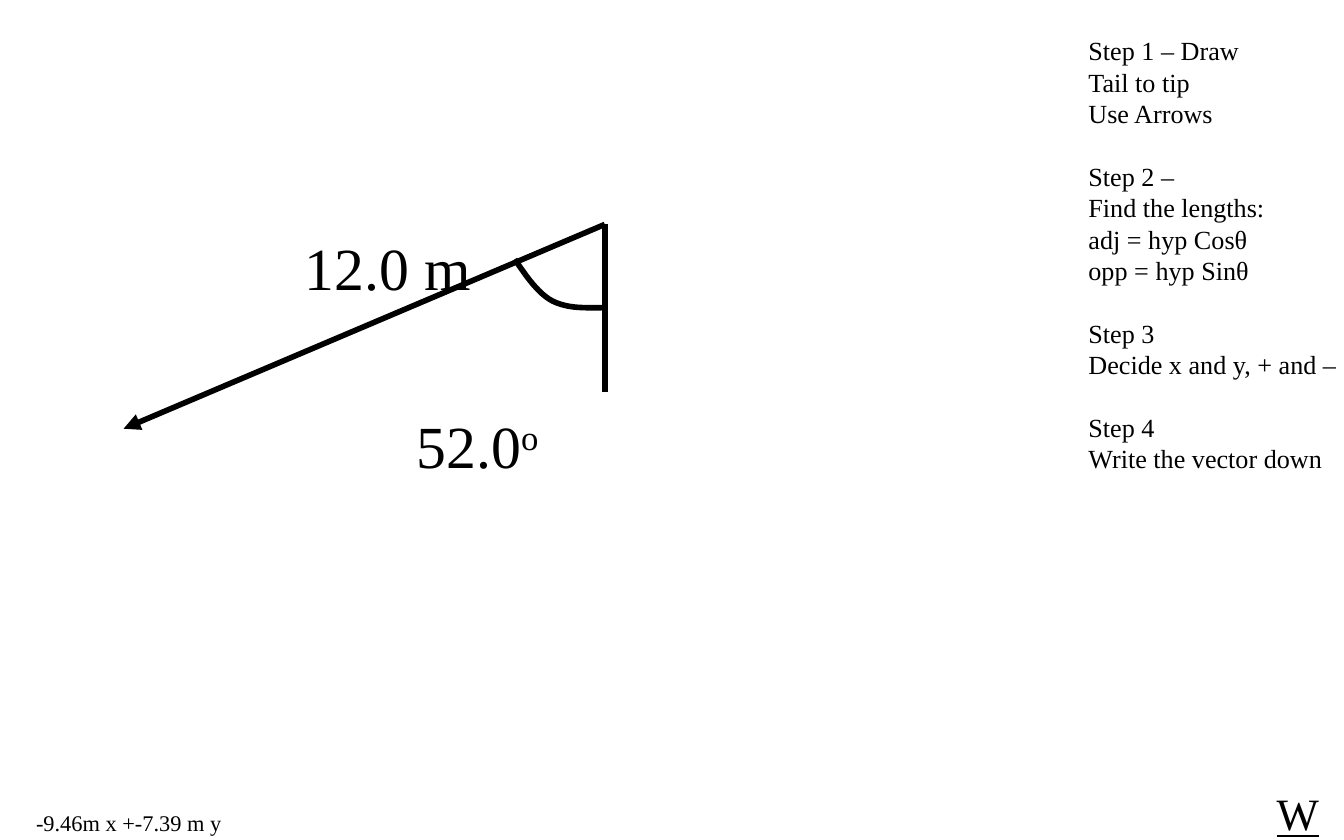
"""Build a vector-components slide: an angled vector, its labels and the solution steps."""
from lxml import etree
from pptx import Presentation
from pptx.dml.color import RGBColor
from pptx.enum import shapes, text
from pptx.oxml import ns
from pptx.util import Inches, Pt

COLORS = {"ink": "000000", "paper": "FFFFFF"}
FONT = "Times New Roman"
INK = RGBColor.from_string(COLORS["ink"])


def add_text(box, lines, size):
    tb = s.shapes.add_textbox(*[Inches(v) for v in box])
    tf = tb.text_frame
    tf.word_wrap = False
    tf.auto_size = text.MSO_AUTO_SIZE.SHAPE_TO_FIT_TEXT
    tf.text = "\n".join(lines)
    for p in tf.paragraphs:
        for r in p.runs:
            r.font.name, r.font.size = FONT, Pt(size)
            r.font.color.rgb = INK
    return tf


def add_line(start, end):
    c = s.shapes.add_connector(
        shapes.MSO_CONNECTOR.STRAIGHT, *[Inches(v) for v in (*start, *end)])
    c.line.color.rgb, c.line.width = INK, Pt(3)
    etree.SubElement(c._element.spPr, ns.qn("a:effectLst"))
    return c


prs = Presentation()
prs.slide_width, prs.slide_height = Inches(10), Inches(6.25)
s = prs.slides.add_slide(prs.slide_layouts[6])
s.background.fill.solid()
s.background.fill.fore_color.rgb = RGBColor.from_string(COLORS["paper"])

add_text((0.17, 5.97, 1.6, 0.3), ["-9.46m x +-7.39 m y"], 12)
tf = add_text((9.4, 5.8, 0.52, 0.5), ["W"], 24)
tf.paragraphs[0].runs[0].font.underline = True
add_text((2.17, 1.67, 1.45, 0.64), ["12.0 m"], 32)

tf = add_text((3, 2.99, 1.14, 0.64), ["52.0"], 32)
r = tf.paragraphs[0].add_run()
r.text = "o"
r.font.name, r.font.size = FONT, Pt(32)
r.font.color.rgb = INK
r.font._element.set("baseline", "30000")

origin = (4.5, 1.67)
add_line(origin, (4.5, 2.92))
vector = add_line(origin, (0.92, 3.19))
etree.SubElement(vector.line._get_or_add_ln(), ns.qn("a:tailEnd"), type="triangle")

arc = [(3.83, 1.93), (3.92, 2.06), (4, 2.18), (4.11, 2.24),
       (4.23, 2.3), (4.37, 2.29), (4.51, 2.29)]
STEPS = 12
points = [arc[0]]
for k in (0, 3):
    for i in range(1, STEPS + 1):
        t = i / STEPS
        weights = ((1 - t) ** 3, 3 * t * (1 - t) ** 2, 3 * t ** 2 * (1 - t), t ** 3)
        points.append(tuple(
            sum(w * q[axis] for w, q in zip(weights, arc[k:k + 4])) for axis in (0, 1)))
points = [(Inches(x), Inches(y)) for x, y in points]
builder = s.shapes.build_freeform(*points[0])
builder.add_line_segments(points[1:], close=False)
sp = builder.convert_to_shape()
sp.shadow.inherit = False
sp.fill.background()
sp.line.color.rgb, sp.line.width = INK, Pt(3)

groups = [
    ["Step 1 – Draw", "Tail to tip", "Use Arrows"],
    ["Step 2 –", "Find the lengths:", "adj = hyp Cosθ", "opp = hyp Sinθ"],
    ["Step 3", "Decide x and y, + and –"],
    ["Step 4", "Write the vector down"],
]
tf = add_text((8, 0.21, 2.08, 3.64), [line for g in groups for line in g], 14)
for p in tf.paragraphs:
    p.line_spacing = Pt(16.8)
first = 0
for g in groups[:-1]:
    first += len(g)
    tf.paragraphs[first].space_before = Pt(16.8)

prs.save("out.pptx")
